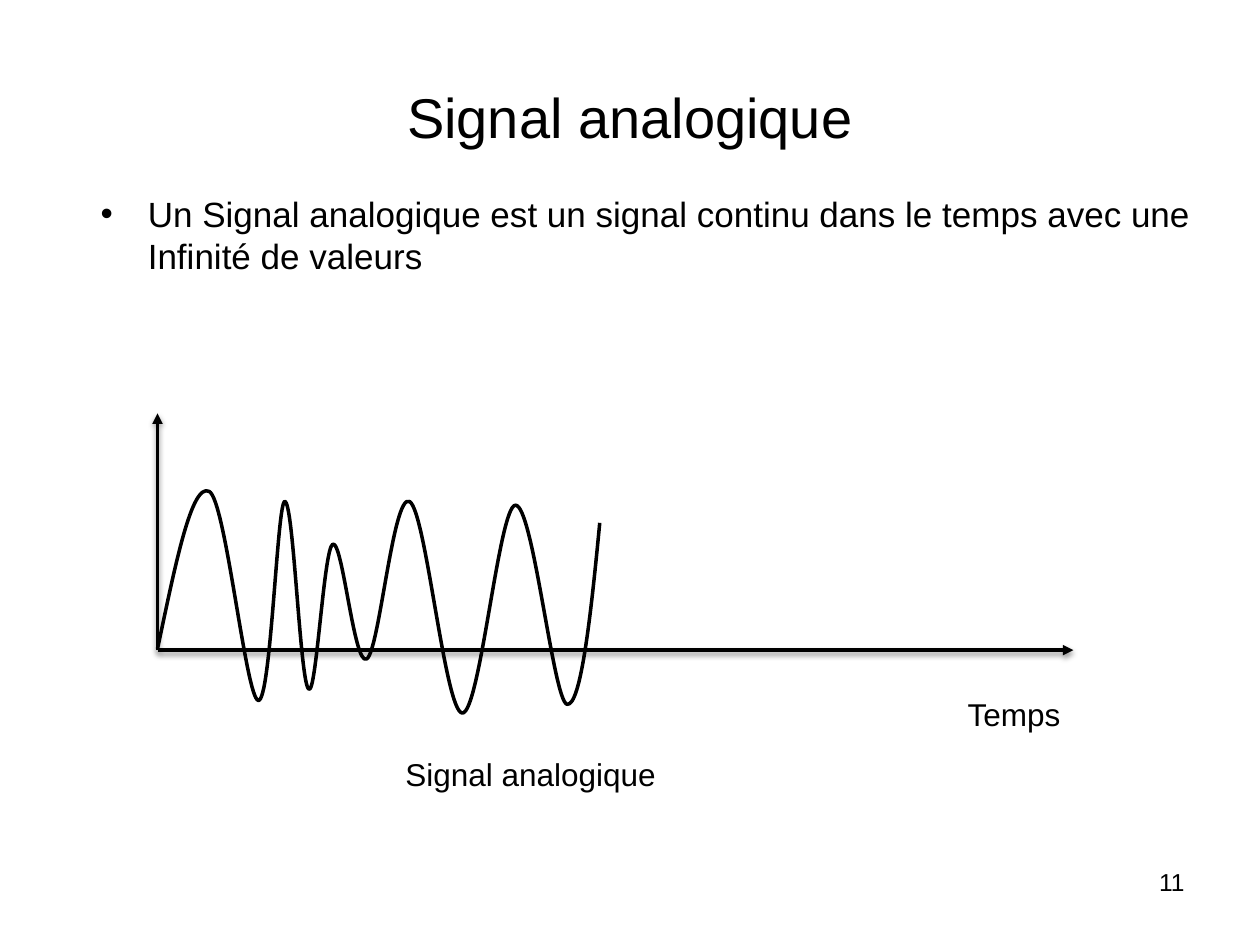
from lxml.etree import SubElement
from pptx import Presentation
from pptx.dml.color import RGBColor
from pptx.enum.shapes import MSO_CONNECTOR as Connector
from pptx.enum.text import MSO_ANCHOR as Anchor, MSO_AUTO_SIZE as AutoSize, PP_ALIGN as Align
from pptx.oxml import parse_xml
from pptx.oxml.ns import nsdecls, qn
from pptx.util import Pt

THEME = {
    "font": "Arial", "ink": RGBColor(0, 0, 0), "line": Pt(2),
    "title": Pt(32), "body": Pt(20), "label": Pt(18), "number": Pt(14),
}

TITLE = ("Signal analogique", (36, 21.6, 648, 90))
DEFINITION = (
    "Un Signal analogique est un signal continu dans le temps avec une Infinité de valeurs",
    (50.4, 106.6, 648, 78.5),
)
LABELS = [
    ("Temps", (545.8, 393.8, 73.4, 29)),
    ("Signal analogique", (224.6, 427.7, 164.2, 29)),
]
PAGE_NUMBER = ("11", (516.2, 491.8, 167.8, 37.4))

ORIGIN = (90, 371.5)
AXES = [
    ((90, 236.2), ORIGIN, "headEnd"),
    (ORIGIN, (613.4, 371.5), "tailEnd"),
]
SIGNAL_START = (90, 370.8)
SIGNAL_CURVES = [
    ((100.1, 323.3), (109.4, 275.8), (119.5, 280.8)),
    ((128.9, 285.1), (140.4, 398.9), (147.6, 400.3)),
    ((154.8, 401), (158.4, 287.3), (162.7, 286.6)),
    ((167.8, 285.8), (171.4, 390.2), (176.4, 393.8)),
    ((180.7, 398.2), (185, 313.9), (190.1, 311)),
    ((195.8, 308.2), (202.3, 380.9), (209.5, 376.6)),
    ((216.7, 373), (224.6, 281.5), (234, 286.6)),
    ((243.4, 291.6), (254.2, 406.8), (264.2, 407.5)),
    ((274.3, 407.5), (285.1, 289.4), (294.5, 288.7)),
    ((304.6, 288), (316.1, 400.3), (324, 402.5)),
    ((331.9, 403.9), (337.7, 351.4), (342.7, 298.8)),
]


def points(values):
    return [Pt(value) for value in values]


def apply(target, **formats):
    for name, value in formats.items():
        setattr(target, name, value)


def write(holder, wording, role, frame_format, paragraph_format):
    frame = holder.text_frame
    frame.text = wording
    apply(frame, **frame_format)
    paragraph = frame.paragraphs[0]
    apply(paragraph, **paragraph_format)
    font = paragraph.runs[0].font
    apply(font, name=THEME["font"], size=THEME[role], bold=False)
    font.color.rgb = THEME["ink"]
    return paragraph


def add_text(slide, content, role, frame_format, **paragraph_format):
    wording, place = content
    box = slide.shapes.add_textbox(*points(place))
    return write(box, wording, role, frame_format, paragraph_format)


def add_title(slide):
    wording, place = TITLE
    title = slide.shapes.title
    apply(title, **dict(zip(("left", "top", "width", "height"), points(place))))
    write(title, wording, "title",
          {"word_wrap": True, "vertical_anchor": Anchor.MIDDLE},
          {"alignment": Align.CENTER})


def add_definition(slide):
    paragraph = add_text(slide, DEFINITION, "body", {"word_wrap": True}, space_before=Pt(4))
    properties = paragraph._p.get_or_add_pPr()
    properties.set("marL", str(Pt(27)))
    properties.set("indent", str(-Pt(27)))
    SubElement(properties, qn("a:buFont"), typeface=THEME["font"])
    SubElement(properties, qn("a:buChar"), char="•")


def draw_stroke(shape):
    shape.line.color.rgb = THEME["ink"]
    shape.line.width = THEME["line"]


def add_axis(slide, start, end, arrow_end):
    axis = slide.shapes.add_connector(Connector.STRAIGHT, *points(start + end))
    draw_stroke(axis)
    SubElement(axis.line._get_or_add_ln(), qn(f"a:{arrow_end}"), type="triangle")
    axis._element.spPr.append(parse_xml(
        f'<a:effectLst {nsdecls("a")}>'
        f'<a:outerShdw blurRad="{Pt(3.1)}" dist="{Pt(1.6)}" dir="5400000" rotWithShape="0">'
        f'<a:srgbClr val="{THEME["ink"]}"><a:alpha val="38000"/></a:srgbClr>'
        '</a:outerShdw></a:effectLst>'))


def add_signal(slide):
    builder = slide.shapes.build_freeform(*points(SIGNAL_START))
    vertices = [points(vertex) for curve in SIGNAL_CURVES for vertex in curve]
    builder.add_line_segments(vertices, close=False)
    signal = builder.convert_to_shape()
    signal.fill.background()
    signal.shadow.inherit = False
    draw_stroke(signal)
    outline = next(signal._element.iter(qn("a:path")))
    steps = outline.findall(qn("a:lnTo"))
    for first in range(0, len(steps), 3):
        curve = SubElement(outline, qn("a:cubicBezTo"))
        for step in steps[first:first + 3]:
            curve.append(step[0])
            outline.remove(step)


def main():
    deck = Presentation()
    apply(deck, slide_width=Pt(720), slide_height=Pt(540))
    slide = deck.slides.add_slide(deck.slide_layouts.get_by_name("Title Only"))
    add_title(slide)
    add_definition(slide)
    for axis in AXES:
        add_axis(slide, *axis)
    add_signal(slide)
    for label in LABELS:
        add_text(slide, label, "label",
                 {"word_wrap": False, "auto_size": AutoSize.SHAPE_TO_FIT_TEXT})
    add_text(slide, PAGE_NUMBER, "number", {"word_wrap": True}, alignment=Align.RIGHT)
    deck.save("out.pptx")


if __name__ == "__main__":
    main()
